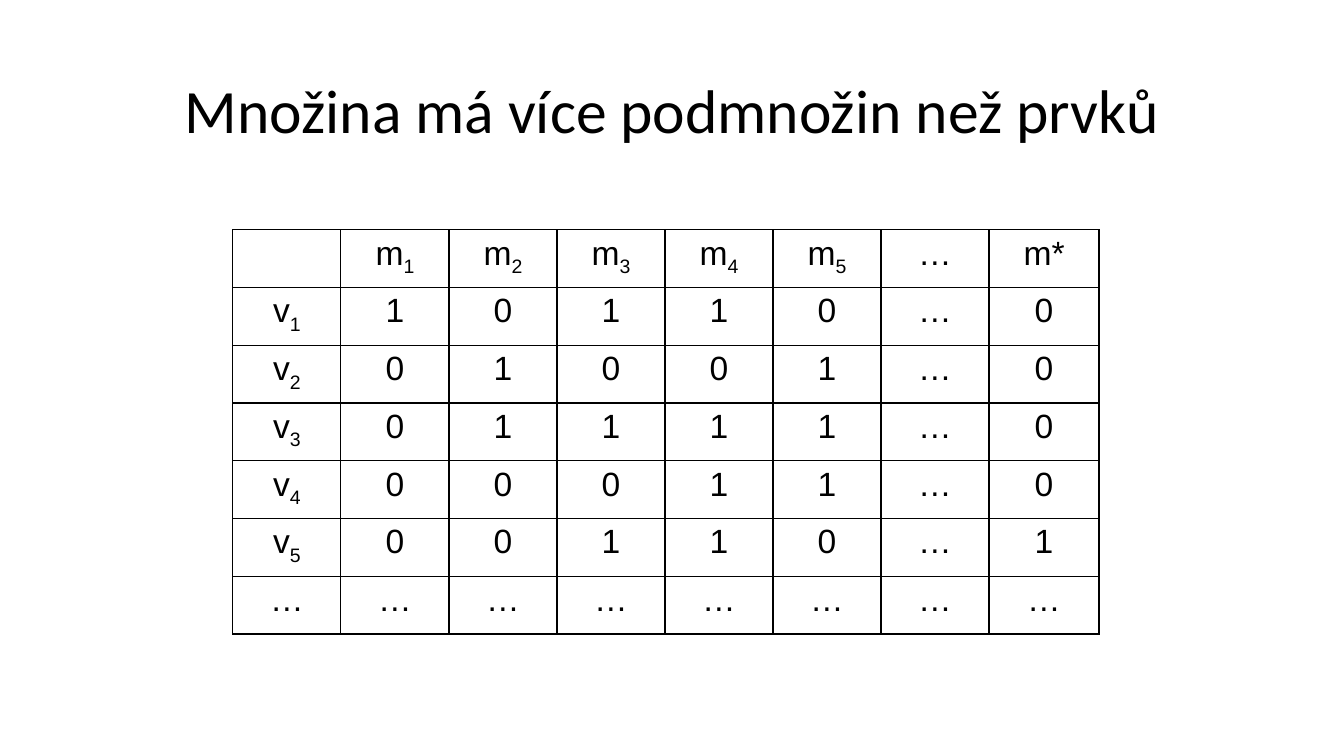
import pptx
import pptx.util
import pptx.dml.color
import pptx.enum.text
import pptx.oxml
import pptx.oxml.ns

TITLE = "Množina má více podmnožin než prvků"
MAIN = [
    ["", "m1", "m2", "m3", "m4", "m5", "…"],
    ["v1", "1", "0", "1", "1", "0", "…"],
    ["v2", "0", "1", "0", "0", "1", "…"],
    ["v3", "0", "1", "1", "1", "1", "…"],
    ["v4", "0", "0", "0", "1", "1", "…"],
    ["v5", "0", "0", "1", "1", "0", "…"],
    ["…"] * 7,
]
DIAG = [[mark] for mark in ("m*", "0", "0", "0", "0", "1", "…")]

BLACK = pptx.dml.color.RGBColor(0, 0, 0)
WHITE = pptx.dml.color.RGBColor(255, 255, 255)
INCH = pptx.util.Inches
LEFT, TOP, WIDE, HIGH = 2.31, 2.28, 7.5, 4.01
SIDE = 1.09


def style(para, face, size):
    para.alignment = pptx.enum.text.PP_ALIGN.CENTER
    para.font.name = face
    para.font.size = pptx.util.Pt(size)
    para.font.color.rgb = BLACK


def border(cell):
    props = cell._tc.get_or_add_tcPr()
    for spot, edge in enumerate(("lnL", "lnR", "lnT", "lnB")):
        props.insert(spot, pptx.oxml.parse_xml(
            f'<a:{edge} {pptx.oxml.ns.nsdecls("a")} w="12700"><a:solidFill>'
            f'<a:srgbClr val="{BLACK}"/></a:solidFill></a:{edge}>'))


def write(cell, text):
    cell.fill.solid()
    cell.fill.fore_color.rgb = WHITE
    border(cell)
    para = cell.text_frame.paragraphs[0]
    style(para, "Arial", 24)
    if text:
        para.add_run().text = text[0]
    if text[1:].isdigit():
        sub = para.add_run()
        sub.text = text[1:]
        sub._r.get_or_add_rPr().set("baseline", "-25000")
    elif text[1:]:
        para.runs[0].text = text


def grid(slide, rows, left, wide):
    table = slide.shapes.add_table(
        len(rows), len(rows[0]), INCH(left), INCH(TOP), INCH(wide), INCH(HIGH)).table
    table.first_row = table.horz_banding = False
    for row, texts in zip(table.rows, rows):
        for cell, text in zip(row.cells, texts):
            write(cell, text)


def main():
    deck = pptx.Presentation()
    deck.slide_width, deck.slide_height = INCH(13.33), INCH(7.5)
    slide = deck.slides.add_slide(deck.slide_layouts[6])
    frame = slide.shapes.add_textbox(
        INCH(0.92), INCH(0.4), INCH(11.5), INCH(1.45)).text_frame
    frame.word_wrap = True
    frame.vertical_anchor = pptx.enum.text.MSO_ANCHOR.MIDDLE
    para = frame.paragraphs[0]
    para.text = TITLE
    para.line_spacing = 0.9
    style(para, "Calibri", 44)
    grid(slide, MAIN, LEFT, WIDE)
    grid(slide, DIAG, LEFT + WIDE, SIDE)
    deck.save("out.pptx")


if __name__ == "__main__":
    main()
